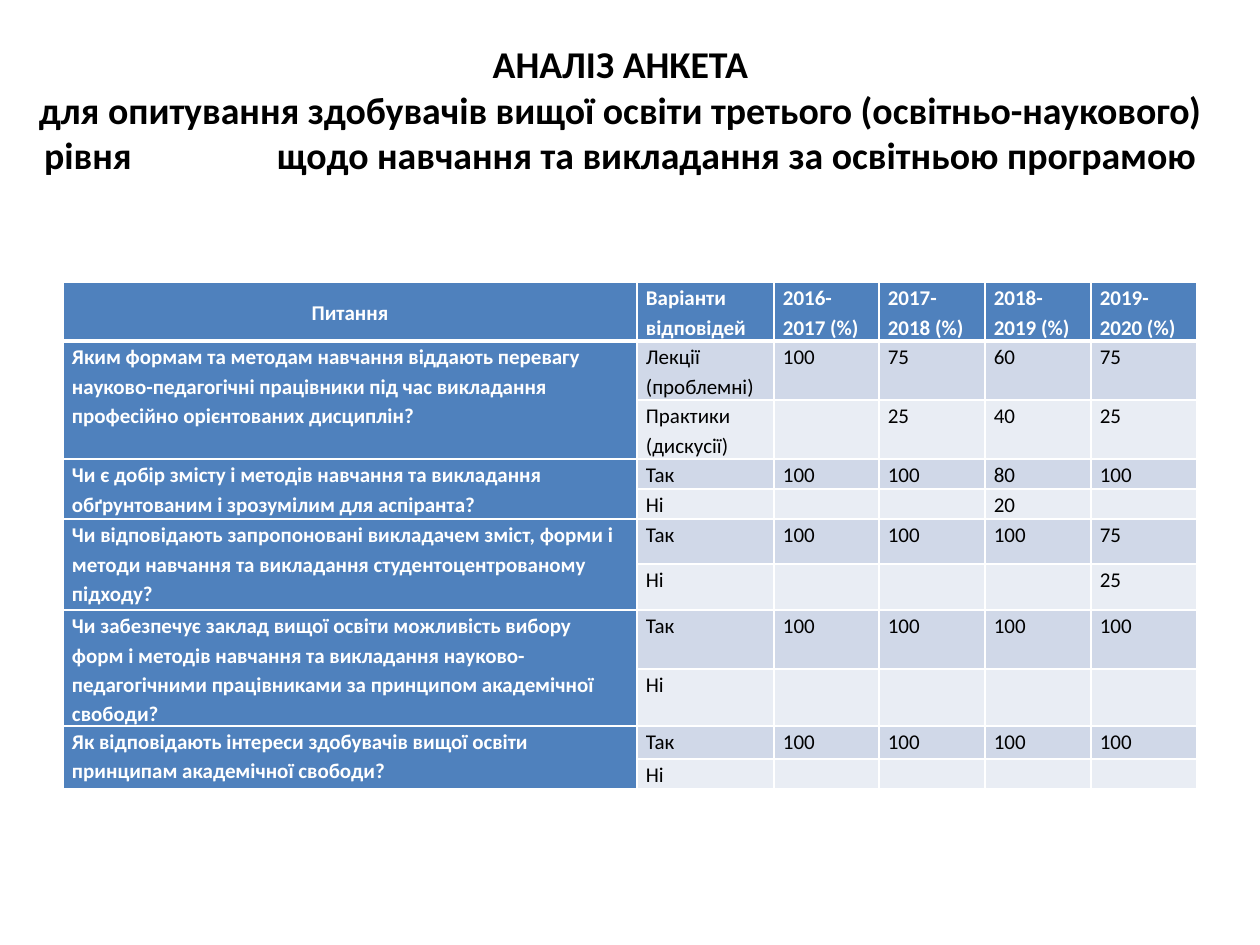
from dataclasses import dataclass

from lxml.etree import SubElement
from pptx import Presentation
from pptx.dml.color import RGBColor
from pptx.enum.text import MSO_ANCHOR as Anchor, PP_ALIGN as Align
from pptx.oxml.ns import qn
from pptx.util import Emu, Pt

PX = 914400 // 126


def px(count):
    return Emu(count * PX)


@dataclass(frozen=True)
class Theme:
    font: str = "Calibri"
    dark: str = "000000"
    light: str = "FFFFFF"
    accent: str = "4F81BD"
    bands: tuple = ("D0D8E8", "E9EDF4")
    title_size: float = 21.6
    cell_size: float = 12
    line: float = 1
    header_line: float = 3


TITLE = "АНАЛІЗ АНКЕТА\vдля опитування здобувачів вищої освіти третього (освітньо-наукового) рівня"
TITLE_END = "щодо навчання та викладання за освітньою програмою"
TITLE_GAP = 78  # points added to the single space between the two parts

HEADER = ["Питання", "Варіанти відповідей"] + [f"{year}-{year + 1} (%)" for year in range(2016, 2020)]
YES, NO = "Так", "Ні"
ALL_YES = [100] * 4
NONE = [""] * 4

# Each question has two answers, each followed by its yearly shares.
QUESTIONS = [
    ("Яким формам та методам навчання віддають перевагу науково-педагогічні працівники "
     "під час викладання професійно орієнтованих дисциплін?",
     ["Лекції (проблемні)", 100, 75, 60, 75], ["Практики (дискусії)", "", 25, 40, 25]),
    ("Чи є добір змісту і методів навчання та викладання обґрунтованим і зрозумілим для аспіранта?",
     [YES, 100, 100, 80, 100], [NO, "", "", 20, ""]),
    ("Чи відповідають запропоновані викладачем зміст, форми і методи навчання та викладання "
     "студентоцентрованому підходу?",
     [YES, 100, 100, 100, 75], [NO, "", "", "", 25]),
    ("Чи забезпечує заклад вищої освіти можливість вибору форм i методів навчання та викладання "
     "науково-педагогічними працівниками за принципом академічної свободи?",
     [YES, *ALL_YES], [NO, *NONE]),
    ("Як відповідають інтереси здобувачів вищої освіти принципам академічної свободи?",
     [YES, *ALL_YES], [NO, *NONE]),
]
COLUMNS = [574, 137, 105, 106, 106, 106]
ROWS = [59, 59, 59, 30, 30, 45, 46, 59, 47, 33, 30]


def write(para, text, *, font, size, color, bold=False, align=Align.LEFT, tracking=0):
    """Add one formatted span; empty text only sets the size of the blank line."""
    para.alignment = align
    if text == "":
        para._p.get_or_add_endParaRPr().set("sz", str(int(size * 100)))
        return
    # A vertical tab in the text marks a line break.
    for index, part in enumerate(str(text).split("\v")):
        if index:
            para.add_line_break()
        span = para.add_run()
        span.text = part
        span.font.name = font
        span.font.size = Pt(size)
        span.font.bold = bold
        span.font.color.rgb = RGBColor.from_string(color)
        if tracking:
            span.font._element.set("spc", str(tracking * 100))


class SlideBuilder:
    def __init__(self, page, theme):
        self.page = page
        self.theme = theme

    def title(self, left, top, width, height):
        theme = self.theme
        box = self.page.shapes.add_textbox(px(left), px(top), px(width), px(height))
        frame = box.text_frame
        frame.word_wrap = True
        frame.vertical_anchor = Anchor.MIDDLE
        for text, tracking in ((TITLE, 0), (" ", TITLE_GAP), (TITLE_END, 0)):
            write(frame.paragraphs[0], text, font=theme.font, size=theme.title_size,
                  color=theme.dark, bold=True, align=Align.CENTER, tracking=tracking)

    def borders(self, cell, top, bottom):
        properties = cell._tc.get_or_add_tcPr()
        line = self.theme.line
        for side, width in (("L", line), ("R", line), ("T", top), ("B", bottom)):
            edge = SubElement(properties, qn(f"a:ln{side}"), w=str(Pt(width)))
            fill = SubElement(edge, qn("a:solidFill"))
            SubElement(fill, qn("a:srgbClr"), val=self.theme.light)

    def cell(self, cell, text, row, column):
        theme = self.theme
        header = row == 0
        strong = header or column == 0
        centred = header and column == 0
        self.borders(cell, theme.header_line if row == 1 else theme.line,
                     theme.header_line if header else theme.line)
        cell.fill.solid()
        cell.fill.fore_color.rgb = RGBColor.from_string(
            theme.accent if strong else theme.bands[(row - 1) % 2])
        cell.margin_left = cell.margin_right = px(9)
        cell.margin_top = cell.margin_bottom = 0
        cell.vertical_anchor = Anchor.MIDDLE if centred else Anchor.TOP
        para = cell.text_frame.paragraphs[0]
        para.line_spacing = 1.15
        para.space_after = Pt(10)
        write(para, text, font=theme.font, size=theme.cell_size, bold=strong,
              color=theme.light if strong else theme.dark,
              align=Align.CENTER if centred else Align.LEFT)

    def table(self, left, top, rows):
        frame = self.page.shapes.add_table(len(ROWS), len(COLUMNS), px(left), px(top),
                                           px(sum(COLUMNS)), px(sum(ROWS)))
        table = frame.table
        for column, width in zip(table.columns, COLUMNS):
            column.width = px(width)
        for line, height in zip(table.rows, ROWS):
            line.height = px(height)
        for row, values in enumerate(rows):
            for column, text in enumerate(values):
                self.cell(table.cell(row, column), text, row, column)
        for row in range(1, len(rows), 2):
            table.cell(row, 0).merge(table.cell(row + 1, 0))


def main():
    deck = Presentation()
    deck.slide_width, deck.slide_height = px(1260), px(945)
    page = deck.slides.add_slide(deck.slide_layouts[6])
    builder = SlideBuilder(page, Theme())
    builder.title(25, 4, 1191, 210)
    rows = [HEADER]
    for question, first, second in QUESTIONS:
        rows += [[question, *first], ["", *second]]
    builder.table(63, 282, rows)
    deck.save("out.pptx")


if __name__ == "__main__":
    main()
